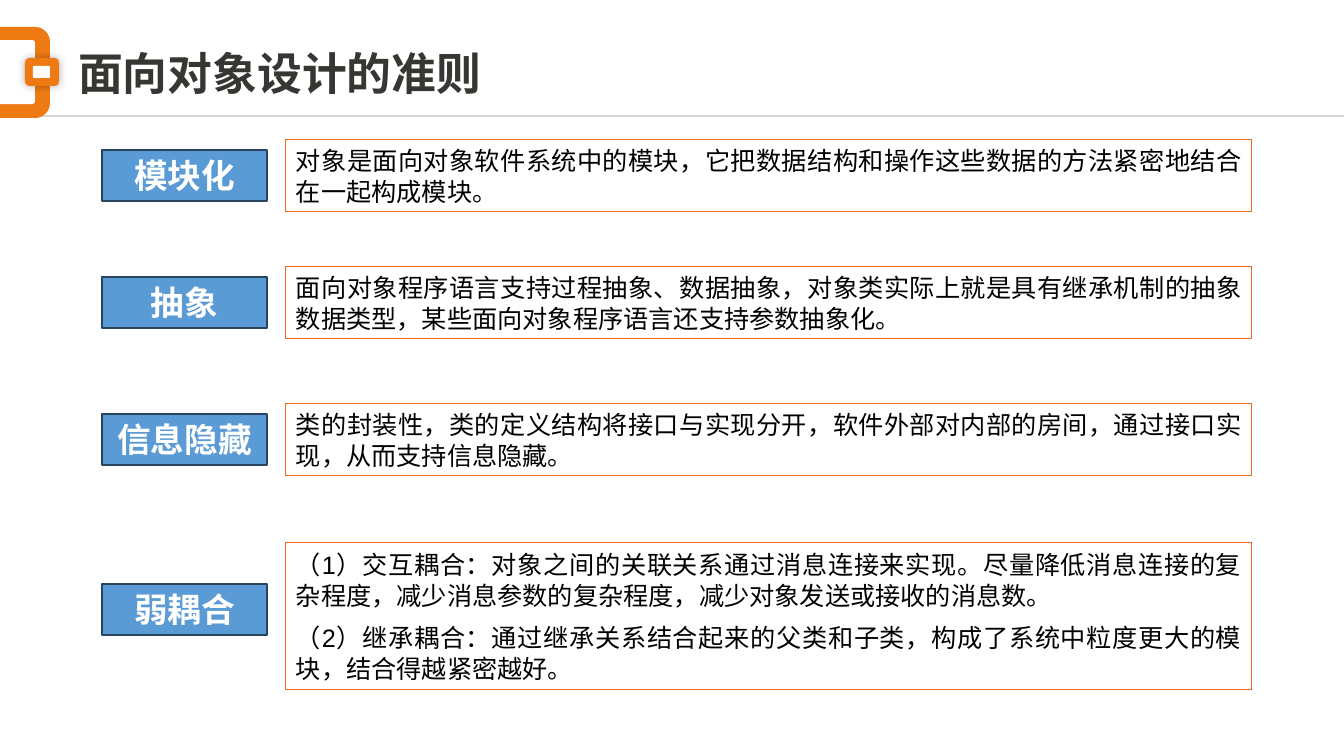
"""Build a slide on the four guidelines of object-oriented design."""
from math import cos, pi, sin

from lxml.etree import SubElement
from pptx import Presentation
from pptx.dml.color import RGBColor
from pptx.enum.lang import MSO_LANGUAGE_ID as Language
from pptx.enum.shapes import MSO_CONNECTOR, MSO_SHAPE
from pptx.enum.text import MSO_ANCHOR, MSO_AUTO_SIZE, PP_ALIGN
from pptx.oxml import parse_xml
from pptx.oxml.ns import nsdecls, qn
from pptx.util import Pt

PX = 914400 / 100.8
DARK = RGBColor(0x36, 0x36, 0x32)
ORANGE = RGBColor(0xEE, 0x7A, 0x13)
FRAME = RGBColor(0xF2, 0x64, 0x1C)
BLUE = RGBColor(0x5B, 0x9B, 0xD5)
NAVY = RGBColor(0x28, 0x44, 0x5D)
WHITE = RGBColor(0xFF, 0xFF, 0xFF)
BLACK = RGBColor(0x00, 0x00, 0x00)

TITLE_FONT = {"name": "Arial", "size": Pt(32), "bold": True}
LABEL_FONT = {"name": "Arial", "size": Pt(24), "bold": True}
BODY_FONT = {"name": "Arial", "size": Pt(18), "bold": False}

GUIDELINES = [
    ("模块化", 150, 140, 72, [
        "对象是面向对象软件系统中的模块，它把数据结构和操作这些数据的方法紧密地结合在一起构成模块。"]),
    ("抽象", 277, 267, 72, [
        "面向对象程序语言支持过程抽象、数据抽象，对象类实际上就是具有继承机制的抽象数据类型，某些面向对象程序语言还支持参数抽象化。"]),
    ("信息隐藏", 414, 404, 72, [
        "类的封装性，类的定义结构将接口与实现分开，软件外部对内部的房间，通过接口实现，从而支持信息隐藏。"]),
    ("弱耦合", 584, 543, 147, [
        "（1）交互耦合：对象之间的关联关系通过消息连接来实现。尽量降低消息连接的复杂程度，减少消息参数的复杂程度，减少对象发送或接收的消息数。",
        "（2）继承耦合：通过继承关系结合起来的父类和子类，构成了系统中粒度更大的模块，结合得越紧密越好。"]),
]


def px(*lengths):
    return [round(length * PX) for length in lengths]


def write(shape, texts, font_values, color, alignment):
    frame = shape.text_frame
    frame.word_wrap = True
    frame.auto_size = MSO_AUTO_SIZE.NONE
    frame.vertical_anchor = MSO_ANCHOR.MIDDLE
    for index, text in enumerate(texts):
        paragraph = frame.add_paragraph() if index else frame.paragraphs[0]
        paragraph.alignment = alignment
        paragraph.space_before = Pt(9 if index else 0)
        run = paragraph.add_run()
        run.text = text
        for name, value in font_values.items():
            setattr(run.font, name, value)
        run.font.color.rgb = color
        run.font.language_id = Language.SIMPLIFIED_CHINESE


presentation = Presentation()
presentation.slide_width, presentation.slide_height = px(1344, 756)
slide = presentation.slides.add_slide(presentation.slide_layouts[5])
shapes = slide.shapes

rule = shapes.add_connector(MSO_CONNECTOR.STRAIGHT, *px(25, 116, 1344, 116))
rule.line.width = Pt(1)
rule.line.color.rgb = DARK
rule_color = rule.line.fill._xPr.find(".//" + qn("a:srgbClr"))
SubElement(rule_color, qn("a:alpha"), val="31000")
SubElement(rule._element.spPr, qn("a:effectLst"))

for top, right, bottom, radius, color in [(27, 50, 118, 15, ORANGE), (40, 35, 104, 3, WHITE)]:
    outline = []
    for center_y, start in [(top + radius, -pi / 2), (bottom - radius, 0)]:
        for step in range(13):
            angle = start + step * pi / 24
            outline.append(px(right - radius + radius * cos(angle), center_y + radius * sin(angle)))
    builder = shapes.build_freeform(*px(0, top))
    builder.add_line_segments(outline + [px(0, bottom)], close=True)
    bracket = builder.convert_to_shape()
    bracket.shadow.inherit = False
    bracket.fill.solid()
    bracket.fill.fore_color.rgb = color
    bracket.line.fill.background()

for box, corner, color in [((25, 58, 34, 28), 0.167, ORANGE), ((33, 66, 17, 12), 0.104, WHITE)]:
    knob = shapes.add_shape(MSO_SHAPE.ROUNDED_RECTANGLE, *px(*box))
    knob.adjustments[0] = corner
    knob.shadow.inherit = False
    knob.fill.solid()
    knob.fill.fore_color.rgb = color
    knob.line.fill.background()
    if color == ORANGE:
        knob._element.spPr.find(qn("a:effectLst")).append(parse_xml(
            f'<a:outerShdw {nsdecls("a")} blurRad="76200" algn="ctr" rotWithShape="0">'
            '<a:srgbClr val="000000"><a:alpha val="30000"/></a:srgbClr></a:outerShdw>'))

title = shapes.title
title.left, title.top, title.width, title.height = px(68, 40, 1241, 65)
write(title, ["面向对象设计的准则"], TITLE_FONT, DARK, PP_ALIGN.LEFT)

for name, label_top, text_top, text_height, texts in GUIDELINES:
    label = shapes.add_shape(MSO_SHAPE.RECTANGLE, *px(102, label_top, 165, 51))
    label.shadow.inherit = False
    label.fill.solid()
    label.fill.fore_color.rgb = BLUE
    label.line.color.rgb = NAVY
    label.line.width = Pt(1)
    write(label, [name], LABEL_FONT, WHITE, PP_ALIGN.CENTER)

    description = shapes.add_shape(MSO_SHAPE.RECTANGLE, *px(286, text_top, 966, text_height))
    description.shadow.inherit = False
    description.fill.background()
    description.line.color.rgb = FRAME
    description.line.width = Pt(0.75)
    write(description, texts, BODY_FONT, BLACK, PP_ALIGN.JUSTIFY)

presentation.save("out.pptx")
